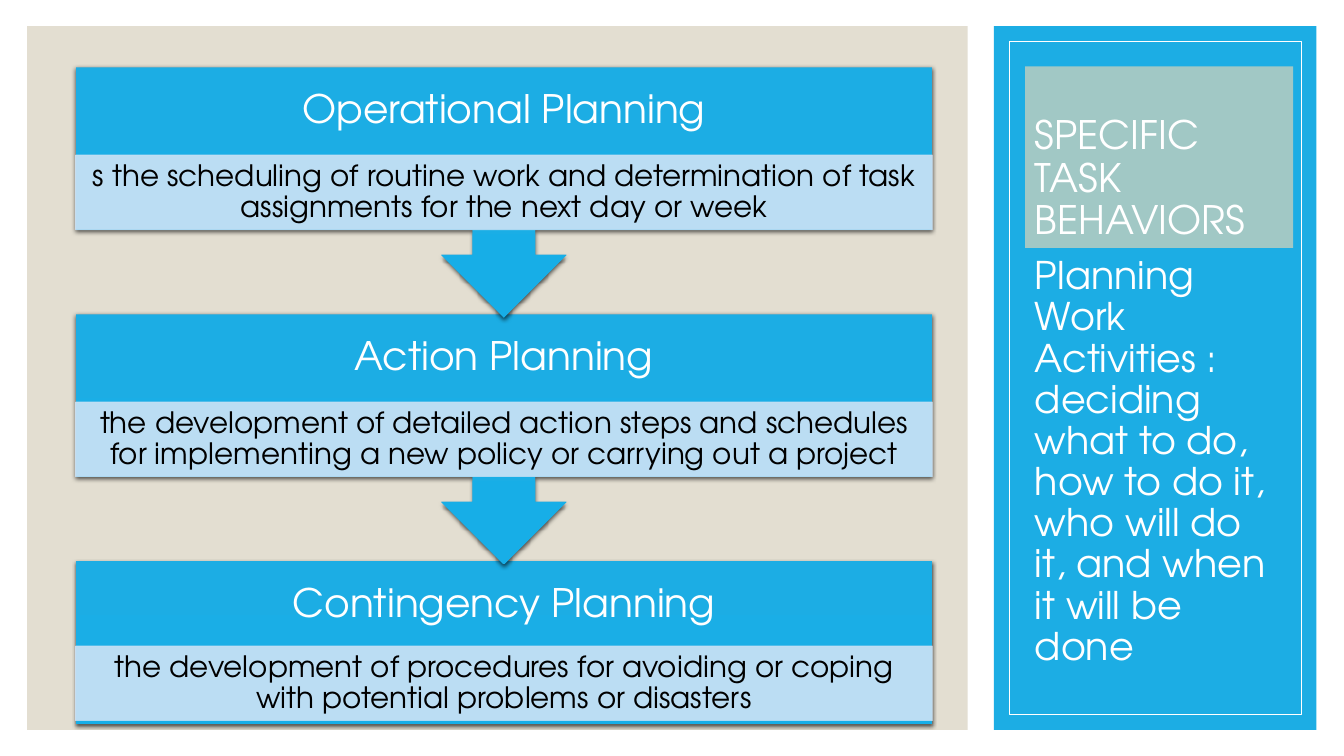
from lxml.etree import SubElement
from pptx import Presentation
from pptx.dml.color import RGBColor
from pptx.enum.shapes import MSO_SHAPE
from pptx.enum.text import MSO_ANCHOR, PP_ALIGN
from pptx.oxml.ns import qn
from pptx.util import Pt

FONT = "TeX Gyre Adventor"
COLORS = {
    "beige": "E3DED1",
    "blue": "1CADE4",
    "deep_blue": "17AEE7",
    "pale_blue": "CDE3F5",
    "sage": "A1C8C5",
    "white": "FFFFFF",
    "black": "000000",
}
STAGES = [
    ("Operational Planning",
     "s the scheduling of routine work and determination of task assignments "
     "for the next day or week"),
    ("Action Planning",
     "the development of detailed action steps and schedules for implementing "
     "a new policy or carrying out a project"),
    ("Contingency Planning",
     "the development of procedures for avoiding or coping with potential "
     "problems or disasters"),
]
STAGE_PITCH = 176.4
CALLOUT_HEIGHT = 178.6
LAST_HEIGHT = 115.9
HEADING_HEIGHT = 62.6
DETAIL_HEIGHT = 53.3


def color(name):
    return RGBColor.from_string(COLORS[name])


def add_box(slide, box, fill=None, line=None, kind=MSO_SHAPE.RECTANGLE):
    shape = slide.shapes.add_shape(kind, *map(Pt, box))
    shape.shadow.inherit = False
    if fill:
        shape.fill.solid()
        shape.fill.fore_color.rgb = color(fill)
    else:
        shape.fill.background()
    if line:
        shape.line.color.rgb = color(line)
        shape.line.width = Pt(0.5)
    else:
        shape.line.fill.background()
    return shape


def write(shape, text, size, ink, anchor, align=PP_ALIGN.LEFT, insets=(7.2, 3.6)):
    """Fill the shape with one paragraph; insets are (side, top and bottom)."""
    frame = shape.text_frame
    frame.word_wrap = True
    frame.vertical_anchor = anchor
    frame.margin_left = frame.margin_right = Pt(insets[0])
    frame.margin_top = frame.margin_bottom = Pt(insets[1])
    frame.text = text
    paragraph = frame.paragraphs[0]
    paragraph.alignment = align
    paragraph.line_spacing = 0.9
    font = paragraph.runs[0].font
    font.name, font.size, font.color.rgb = FONT, Pt(size), color(ink)
    return paragraph


def set_opacity(color_parent, percent):
    for element in color_parent.iter(qn("a:srgbClr")):
        SubElement(element, qn("a:alpha"), val=str(percent * 1000))


def add_shadow(shape):
    effects = shape._element.spPr.find(qn("a:effectLst"))
    shadow = SubElement(effects, qn("a:outerShdw"), blurRad=str(Pt(3)),
                        dist=str(Pt(1)), dir="5400000", rotWithShape="0")
    SubElement(shadow, qn("a:srgbClr"), val=COLORS["black"])
    set_opacity(shadow, 63)


def add_stage(slide, box, heading, detail, detail_offset, kind):
    left, top, width, _ = box
    callout = add_box(slide, box, kind=kind)
    callout.fill.gradient()
    callout.fill.gradient_angle = 270
    for stop, name in zip(callout.fill.gradient_stops, ("blue", "deep_blue")):
        stop.color.rgb = color(name)
    add_shadow(callout)

    title = slide.shapes.add_textbox(*map(Pt, (left, top, width, HEADING_HEIGHT)))
    write(title, heading, 28, "white", MSO_ANCHOR.MIDDLE, PP_ALIGN.CENTER, (15.8, 15.8))

    band = add_box(slide, (left, top + detail_offset, width, DETAIL_HEIGHT),
                   "pale_blue", "pale_blue")
    set_opacity(band._element.spPr, 90)
    write(band, detail, 21, "black", MSO_ANCHOR.MIDDLE, PP_ALIGN.CENTER, (11.5, 2.2))


def add_process(slide, box):
    """Panel with the stages, drawn from the last up so each arrow tip lies on top."""
    left, top, width, _ = box
    add_box(slide, box, "beige")
    last = len(STAGES) - 1
    for index in range(last, -1, -1):
        is_last = index == last
        kind = MSO_SHAPE.RECTANGLE if is_last else MSO_SHAPE.DOWN_ARROW_CALLOUT
        height = LAST_HEIGHT if is_last else CALLOUT_HEIGHT
        offset = 60.5 if is_last else HEADING_HEIGHT
        stage_box = (left + 34.6, top + 29.5 + index * STAGE_PITCH, 612, height)
        add_stage(slide, stage_box, *STAGES[index], offset, kind)


def add_sidebar(slide, box):
    left, top, width, height = box
    add_box(slide, box, "blue")
    add_box(slide, (left + 10.8, top + 10.8, width - 21.6, height - 21.6), line="white")
    title = add_box(slide, (left + 22.3, top + 28.8, 191.5, 129.6), "sage")
    write(title, "SPECIFIC TASK BEHAVIORS", 28, "white", MSO_ANCHOR.BOTTOM)
    body = slide.shapes.add_textbox(*map(Pt, (left + 22.3, top + 161.3, 191.5, 275.8)))
    paragraph = write(
        body,
        "Planning Work Activities : deciding what to do, how to do it, "
        "who will do it, and when it will be done",
        27.2, "white", MSO_ANCHOR.TOP)
    paragraph.space_before = Pt(8)


def main():
    presentation = Presentation()
    presentation.slide_width, presentation.slide_height = Pt(960), Pt(540)
    slide = presentation.slides.add_slide(presentation.slide_layouts[6])
    add_process(slide, (19.4, 18.7, 671.8, 502.6))
    add_sidebar(slide, (709.9, 18.7, 230.4, 502.6))
    presentation.save("out.pptx")


if __name__ == "__main__":
    main()
